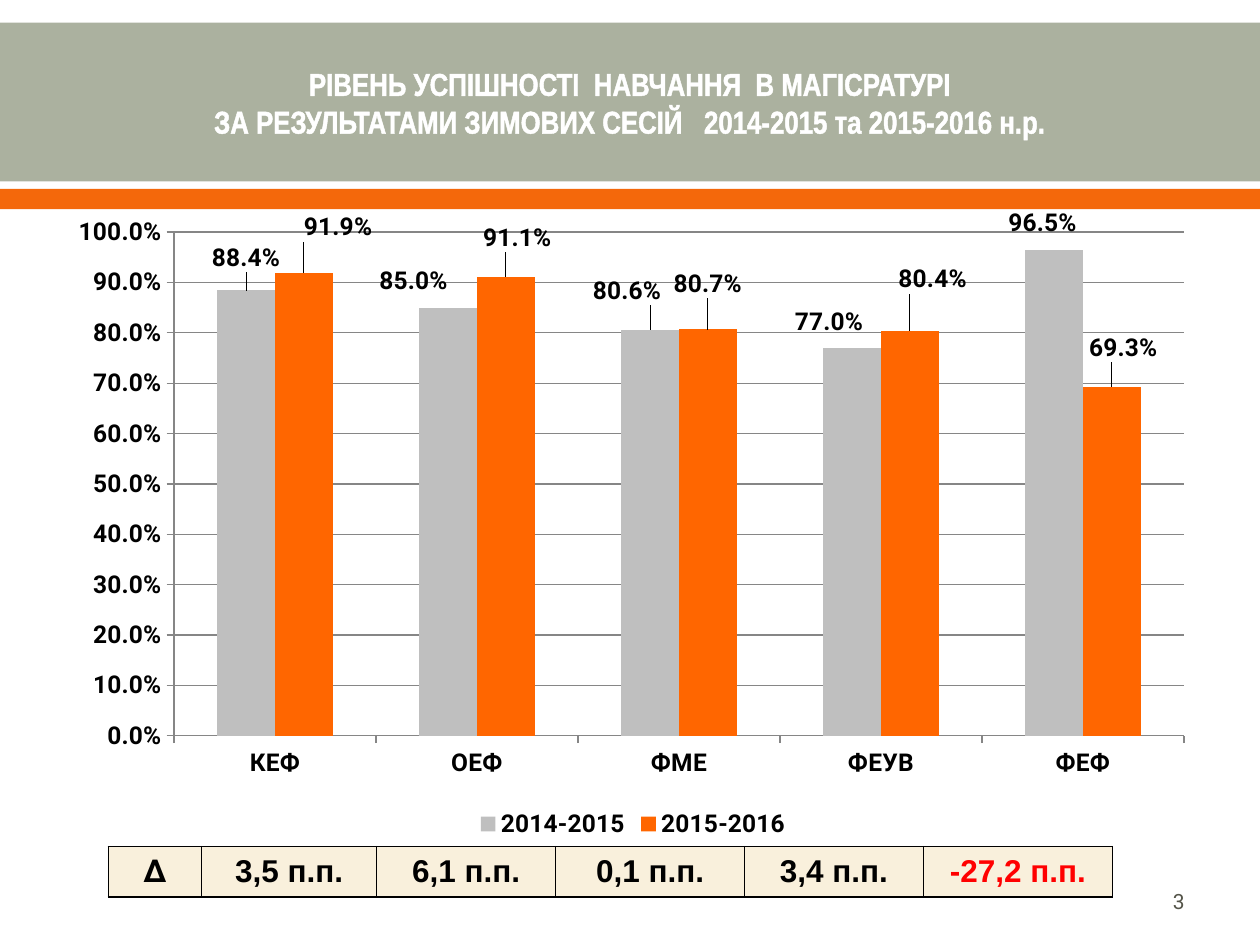
from dataclasses import dataclass

from lxml.etree import SubElement
from pptx import Presentation
from pptx.chart.data import CategoryChartData
from pptx.dml.color import RGBColor
from pptx.enum.chart import XL_CHART_TYPE, XL_LABEL_POSITION, XL_LEGEND_POSITION, XL_TICK_MARK
from pptx.enum.shapes import MSO_SHAPE
from pptx.enum.text import MSO_ANCHOR, PP_ALIGN
from pptx.oxml import parse_xml
from pptx.oxml.ns import nsdecls, qn
from pptx.util import Inches, Pt

WIDTH, HEIGHT = 10, 7.5


@dataclass(frozen=True)
class Theme:
    banner: str = "ABB19F"
    accent: str = "F4680B"
    title: str = "FFFFFF"
    ink: str = "000000"
    muted: str = "55554A"
    negative: str = "FF0000"
    cell: str = "F9F0DC"
    grid: str = "868686"
    earlier: str = "BFBFBF"
    later: str = "FF6600"
    body_font: str = "Roboto"
    title_font: str = "Arial Narrow"
    table_font: str = "Arial"
    large: int = 18
    medium: int = 14
    small: int = 12


THEME = Theme()

TITLE = ("РІВЕНЬ УСПІШНОСТІ  НАВЧАННЯ  В МАГІСРАТУРІ\v"
         "ЗА РЕЗУЛЬТАТАМИ ЗИМОВИХ СЕСІЙ   2014-2015 та 2015-2016 н.р.")
FACULTIES = ["КЕФ", "ОЕФ", "ФМЕ", "ФЕУВ", "ФЕФ"]
# Year, colour, success rates, label shifts as shares of the chart's size
YEARS = [
    ("2014-2015", THEME.earlier, [0.884, 0.85, 0.806, 0.77, 0.965],
     [(0, -0.02), (-0.03, -0.01), (-0.02, -0.03), (-0.02, -0.01), (-0.01, -0.01)]),
    ("2015-2016", THEME.later, [0.919, 0.911, 0.807, 0.804, 0.693],
     [(0.03, -0.04), (0.01, -0.03), (0, -0.04), (0.02, -0.05), (0.01, -0.03)]),
]
CHANGES = ["∆", "3,5 п.п.", "6,1 п.п.", "0,1 п.п.", "3,4 п.п.", "-27,2 п.п."]
CHANGE_WIDTHS = [0.74, 1.39, 1.42, 1.5, 1.42, 1.5]


def rgb(color):
    return RGBColor.from_string(color)


def style_font(font, size, color=THEME.ink, family=THEME.body_font, bold=False):
    font.size, font.name, font.bold = Pt(size), family, bold
    font.color.rgb = rgb(color)


def write(frame, text, align=PP_ALIGN.CENTER, outline=None, **style):
    """Fill a text frame; a vertical tab in the text breaks the line."""
    frame.word_wrap = True
    paragraph = frame.paragraphs[0]
    paragraph.text, paragraph.alignment = text, align
    for run in paragraph.runs:
        style_font(run.font, **style)
        if outline:
            run.font._element.insert(0, parse_xml(
                f'<a:ln {nsdecls("a")} w="{Pt(1.1)}"><a:solidFill>'
                f'<a:srgbClr val="{outline}"/></a:solidFill></a:ln>'))


def add_text(slide, box, text, **style):
    frame = slide.shapes.add_textbox(*map(Inches, box)).text_frame
    frame.vertical_anchor = MSO_ANCHOR.MIDDLE
    write(frame, text, **style)


def add_band(slide, top, height, color):
    band = slide.shapes.add_shape(MSO_SHAPE.RECTANGLE, 0, Inches(top), Inches(WIDTH), Inches(height))
    band.shadow.inherit = False
    band.fill.solid()
    band.fill.fore_color.rgb = rgb(color)
    band.line.fill.background()


def manual_layout(**places):
    """Build a chart layout from its settings, in schema order."""
    settings = "".join(f'<c:{name} val="{value}"/>' for name, value in places.items())
    return parse_xml(f'<c:layout {nsdecls("c")}><c:manualLayout>{settings}</c:manualLayout></c:layout>')


def style_line(line, color):
    line.color.rgb = rgb(color)
    line.width = Pt(0.75)


def style_axis(axis):
    style_font(axis.tick_labels.font, THEME.medium, bold=True)
    style_line(axis.format.line, THEME.grid)


def style_labels(labels):
    style_font(labels.font, THEME.medium, bold=True)
    labels.position = XL_LABEL_POSITION.OUTSIDE_END


def style_series(series, color, shifts):
    series.format.fill.solid()
    series.format.fill.fore_color.rgb = rgb(color)
    labels = series.data_labels
    style_labels(labels)
    labels.show_value = True
    labels.number_format, labels.number_format_is_linked = "0.0%", False
    for index in range(len(shifts)):
        style_labels(series.points[index].data_label)
    for label, (x, y) in zip(labels._element.findall(qn("c:dLbl")), shifts):
        label.insert(1, manual_layout(x=x, y=y))


def add_rates_chart(slide, box):
    rates = CategoryChartData(number_format="0.0%")
    rates.categories = FACULTIES
    for year, _, values, _ in YEARS:
        rates.add_series(year, values)
    chart = slide.shapes.add_chart(XL_CHART_TYPE.COLUMN_CLUSTERED, *map(Inches, box), rates).chart
    style_font(chart.font, THEME.large)
    chart.has_title = False
    chart.has_legend = True
    chart.legend.position = XL_LEGEND_POSITION.BOTTOM
    chart.legend.include_in_layout = False
    style_font(chart.legend.font, THEME.medium, bold=True)

    plot = chart.plots[0]
    plot.vary_by_categories = False
    plot.gap_width, plot.overlap = 150, 0
    for series, (_, color, _, shifts) in zip(plot.series, YEARS):
        style_series(series, color, shifts)

    style_axis(chart.category_axis)
    chart.category_axis.major_tick_mark = XL_TICK_MARK.OUTSIDE
    scale = chart.value_axis
    style_axis(scale)
    scale.major_tick_mark = XL_TICK_MARK.OUTSIDE
    scale.minimum_scale, scale.maximum_scale, scale.major_unit = 0, 1, 0.1
    scale.tick_labels.number_format = "0.0%"
    scale.tick_labels.number_format_is_linked = False
    style_line(scale.major_gridlines.format.line, THEME.grid)

    plot_area = chart._chartSpace.chart.plotArea
    for layout in plot_area.findall(qn("c:layout")):
        plot_area.remove(layout)
    plot_area.insert(0, manual_layout(layoutTarget="inner", xMode="edge", yMode="edge",
                                      x=0.1, y=0.04, w=0.88, h=0.79))


def border_cell(cell):
    properties = cell._tc.get_or_add_tcPr()
    for side in ("a:lnL", "a:lnR", "a:lnT", "a:lnB"):
        border = SubElement(properties, qn(side), w=str(Pt(1)))
        SubElement(SubElement(border, qn("a:solidFill")), qn("a:srgbClr"), val=THEME.ink)


def add_changes_table(slide, left, top, height):
    table = slide.shapes.add_table(1, len(CHANGES), Inches(left), Inches(top),
                                   Inches(sum(CHANGE_WIDTHS)), Inches(height)).table
    table.first_row = table.horz_banding = False
    for index, (change, width) in enumerate(zip(CHANGES, CHANGE_WIDTHS)):
        table.columns[index].width = Inches(width)
        cell = table.cell(0, index)
        border_cell(cell)
        cell.fill.solid()
        cell.fill.fore_color.rgb = rgb(THEME.cell)
        cell.vertical_anchor = MSO_ANCHOR.MIDDLE
        write(cell.text_frame, change, size=THEME.large, bold=True,
              family=THEME.table_font if index else THEME.body_font,
              color=THEME.negative if change.startswith("-") else THEME.ink)


def main():
    deck = Presentation()
    deck.slide_width, deck.slide_height = Inches(WIDTH), Inches(HEIGHT)
    slide = deck.slides.add_slide(deck.slide_layouts[6])
    add_band(slide, 0.18, 1.26, THEME.banner)
    add_band(slide, 1.5, 0.16, THEME.accent)
    add_text(slide, (7.17, 6.95, 2.33, 0.4), "3", align=PP_ALIGN.RIGHT,
             size=THEME.small, color=THEME.muted)
    add_text(slide, (0.5, 0.2, 9, 1.22), TITLE, size=THEME.large, bold=True,
             family=THEME.title_font, color=THEME.title, outline=THEME.title)
    add_rates_chart(slide, (0.47, 1.64, 9.11, 5.06))
    add_changes_table(slide, 0.86, 6.72, 0.4)
    deck.save("out.pptx")


if __name__ == "__main__":
    main()
